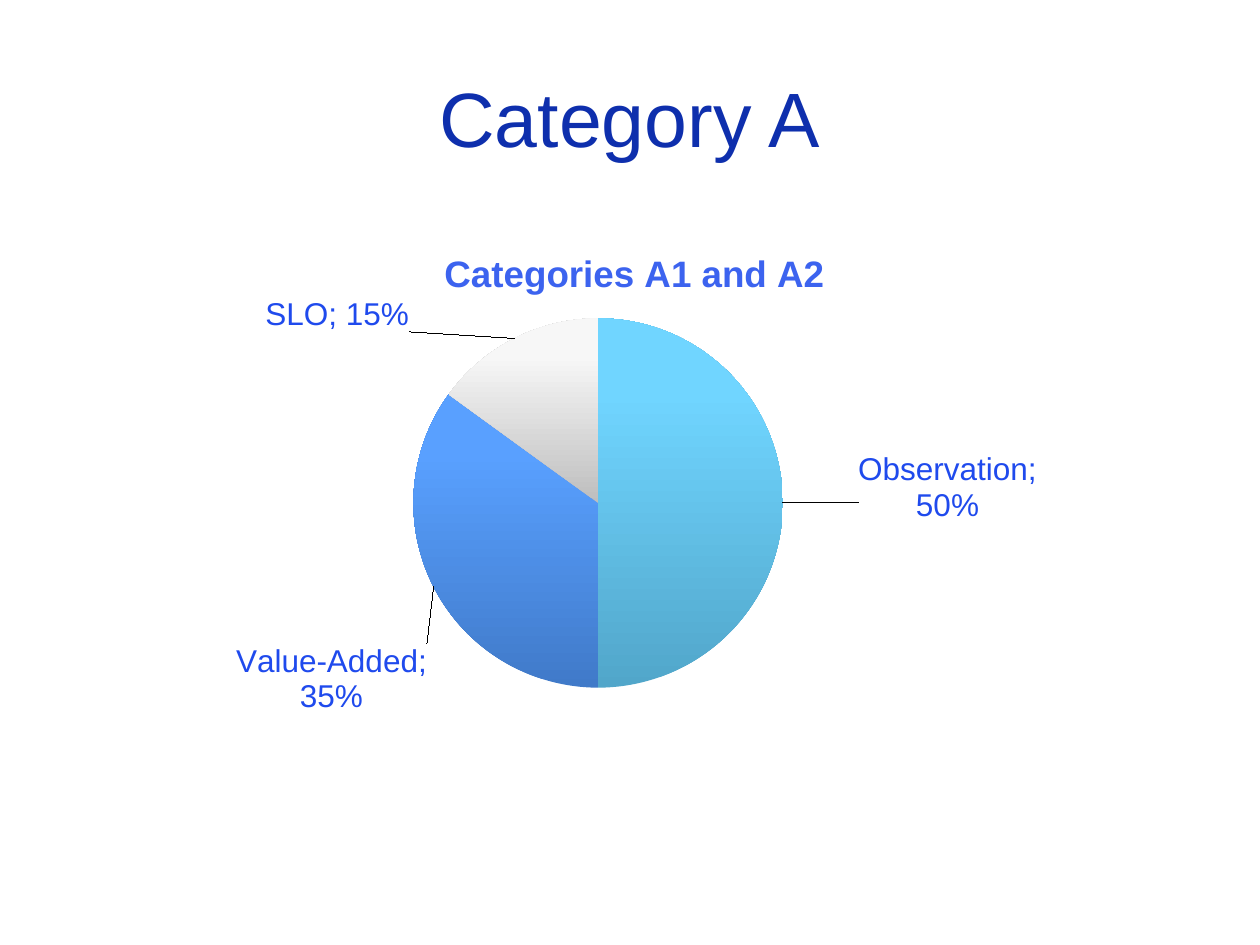
from dataclasses import dataclass

from lxml.etree import SubElement
from pptx import Presentation
from pptx.chart.data import CategoryChartData
from pptx.dml.color import RGBColor as RGB
from pptx.enum.chart import XL_CHART_TYPE as Kind, XL_LABEL_POSITION as Spot
from pptx.enum.text import MSO_ANCHOR as Anchor, PP_ALIGN as Align
from pptx.oxml import parse_xml
from pptx.oxml.ns import nsdecls, qn
from pptx.util import Emu, Pt


@dataclass(frozen=True)
class Theme:
    face: str = "Arial"
    title: str = "0E2FAD"
    head: str = "3C63EF"
    label: str = "1F4AED"
    title_pt: int = 44
    head_pt: int = 21
    label_pt: int = 18


@dataclass(frozen=True)
class Slice:
    name: str
    share: float
    shades: tuple[str, str, str]
    shift: tuple[float, float]


THEME = Theme()
STOPS = (0, 80, 100)
SLICES = (
    Slice("Observation", 0.5, ("51A6CA", "70D5FF", "72D5FF"), (0.06, -0.03)),
    Slice("Value-Added", 0.35, ("407AC9", "59A0FF", "5BA1FF"), (0, 0.1)),
    Slice("SLO", 0.15, ("BEBEBE", "F7F7F7", "F8F8F8"), (-0.09, 0)),
)


def px(count: int) -> Emu:
    return Emu(round(count * 914400 / 126))


def style(font, size: int, color: str, bold: bool = False) -> None:
    font.name, font.size, font.bold = THEME.face, Pt(size), bold
    font.color.rgb = RGB.from_string(color)


def layout(**marks):
    """Make a manual chart layout from its c: values, in schema order."""
    root = parse_xml(f"<c:layout {nsdecls('c')}/>")
    manual = SubElement(root, qn("c:manualLayout"))
    for tag, value in marks.items():
        SubElement(manual, qn(f"c:{tag}")).set("val", str(value))
    return root


def shade(point, colors: tuple[str, str, str]) -> None:
    """Fill a slice with a gradient that runs from bottom to top."""
    stops = "".join(
        f'<a:gs pos="{stop * 1000}"><a:srgbClr val="{color}"/></a:gs>'
        for stop, color in zip(STOPS, colors)
    )
    point.format.line.fill.background()
    point.format.line._ln.addprevious(parse_xml(
        f'<a:gradFill {nsdecls("a")} rotWithShape="1"><a:gsLst>{stops}</a:gsLst>'
        '<a:lin ang="16200000" scaled="0"/></a:gradFill>'
    ))


def add_title(slide, text: str) -> None:
    title = slide.shapes.title
    title.left, title.top = px(63), px(38)
    title.width, title.height = px(1134), px(157)
    frame = title.text_frame
    frame.text = text
    frame.vertical_anchor = Anchor.MIDDLE
    para = frame.paragraphs[0]
    para.alignment = Align.CENTER
    style(para.font, THEME.title_pt, THEME.title)


def add_pie(slide, head: str, slices: tuple[Slice, ...]) -> None:
    data = CategoryChartData(number_format="0%")
    data.categories = [part.name for part in slices]
    data.add_series("Series 1", [part.share for part in slices])
    chart = slide.shapes.add_chart(
        Kind.PIE, px(64), px(223), px(1133), px(530), data
    ).chart
    style(chart.font, 10, THEME.title)
    chart.has_legend = False

    frame = chart.chart_title.text_frame
    frame.text = head
    style(frame.paragraphs[0].font, THEME.head_pt, THEME.head, True)
    chart.chart_title.include_in_layout = False
    root = chart._chartSpace
    for old in root.xpath("c:chart/c:title/c:layout | c:chart/c:plotArea/c:layout"):
        old.getparent().remove(old)
    root.find(".//" + qn("c:title")).find(qn("c:tx")).addnext(
        layout(xMode="edge", yMode="edge", x=0.33, y=0.04)
    )
    root.find(".//" + qn("c:plotArea")).insert(0, layout(
        layoutTarget="inner", xMode="edge", yMode="edge",
        x=0.124, y=0.18, w=0.695, h=0.697,
    ))

    plot = chart.plots[0]
    plot.vary_by_categories = True
    series = plot.series[0]
    labels = series.data_labels
    labels.show_value = labels.show_category_name = True
    labels.number_format, labels.number_format_is_linked = "0%", False
    labels.position = Spot.OUTSIDE_END
    style(labels.font, THEME.label_pt, THEME.label)
    for num, part in enumerate(slices):
        point = series.points[num]
        shade(point, part.shades)
        label = point.data_label
        label.position = Spot.OUTSIDE_END
        style(label.font, THEME.label_pt, THEME.label)
    for mark, part in zip(series._element.iter(qn("c:dLbl")), slices):
        mark.find(qn("c:showCatName")).set("val", "1")
        mark.find(qn("c:idx")).addnext(layout(x=part.shift[0], y=part.shift[1]))


def main() -> None:
    deck = Presentation()
    deck.slide_width, deck.slide_height = px(1260), px(945)
    slide = deck.slides.add_slide(deck.slide_layouts[5])
    add_title(slide, "Category A")
    add_pie(slide, "Categories A1 and A2", SLICES)
    deck.save("out.pptx")


if __name__ == "__main__":
    main()
